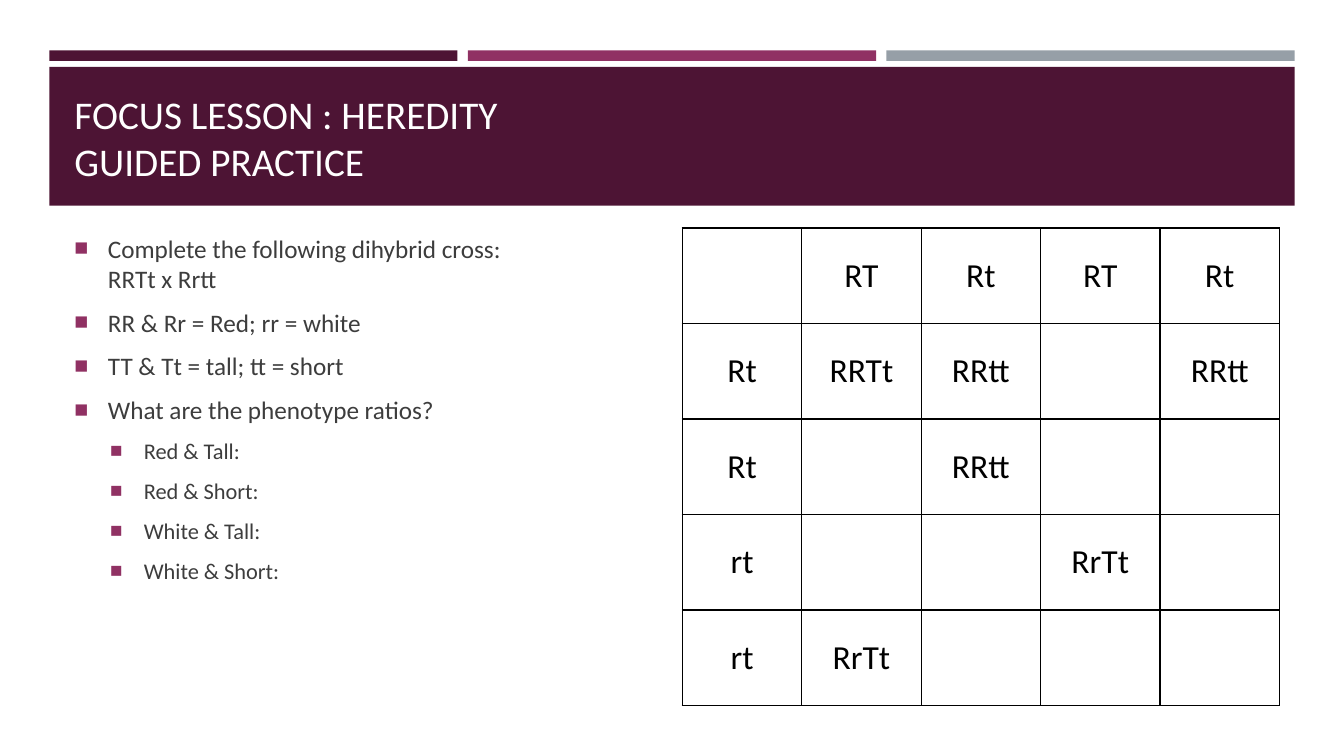
from typing import NamedTuple

from lxml.etree import SubElement
from pptx import Presentation
from pptx.dml.color import RGBColor
from pptx.enum.shapes import MSO_SHAPE as Shape
from pptx.enum.text import MSO_ANCHOR as Anchor, MSO_AUTO_SIZE as AutoSize, PP_ALIGN as Align
from pptx.oxml.ns import qn
from pptx.util import Pt

FONT = "Calibri"
PLUM = "4D1434"
MAGENTA = "903163"
GREY = "969FA7"
WHITE = "FFFFFF"
BLACK = "000000"
TEXT = "3D3D3D"


class Area(NamedTuple):
    left: float
    top: float
    width: float
    height: float


class Block(NamedTuple):
    area: Area
    fill: str


class Bullet(NamedTuple):
    text: str
    level: int = 0


BAR_WIDTH, BAR_STEP = 291.6, 299
BLOCKS = [
    Block(Area(35.2 + BAR_STEP * index, 36, BAR_WIDTH, 7.5), fill)
    for index, fill in enumerate([PLUM, MAGENTA, GREY])
] + [Block(Area(35.2, 47.8, 889.6, 99.2), PLUM)]

TITLE_AREA = Area(46, 57.6, 868.3, 77.8)
BODY_AREA = Area(46, 162.8, 427, 341.2)
TABLE_AREA = Area(487.4, 162.8, 426.5, 341.2)

BULLETS = [
    Bullet("Complete the following dihybrid cross:\vRRTt x Rrtt"),
    Bullet("RR & Rr = Red; rr = white"),
    Bullet("TT & Tt = tall; tt = short"),
    Bullet("What are the phenotype ratios?"),
    Bullet("Red & Tall:", 1),
    Bullet("Red & Short:", 1),
    Bullet("White & Tall:", 1),
    Bullet("White & Short:", 1),
]
BULLET_SIZES = [18, 16]
BULLET_MARGINS = [24, 49.7]
BULLET_HANG = 24

CROSS = [
    ["", "RT", "Rt", "RT", "Rt"],
    ["Rt", "RRTt", "RRtt", "", "RRtt"],
    ["Rt", "", "RRtt", "", ""],
    ["rt", "", "", "RrTt", ""],
    ["rt", "RrTt", "", "", ""],
]


def color(value: str) -> RGBColor:
    return RGBColor.from_string(value)


def points(area: Area) -> list[int]:
    return [Pt(length) for length in area]


def set_font(para, size: float, fill: str) -> None:
    para.font.name = FONT
    para.font.size = Pt(size)
    para.font.color.rgb = color(fill)


def draw_block(page, block: Block) -> None:
    shape = page.shapes.add_shape(Shape.RECTANGLE, *points(block.area))
    shape.shadow.inherit = False
    shape.fill.solid()
    shape.fill.fore_color.rgb = color(block.fill)
    shape.line.fill.background()


def draw_title(page, text: str) -> None:
    title = page.shapes.title
    title.left, title.top, title.width, title.height = points(TITLE_AREA)
    frame = title.text_frame
    frame.text = text
    frame.word_wrap = True
    frame.auto_size = AutoSize.NONE
    frame.vertical_anchor = Anchor.BOTTOM
    para = frame.paragraphs[0]
    para.alignment = Align.LEFT
    set_font(para, 28, WHITE)


def format_bullet(para, bullet: Bullet) -> None:
    size = BULLET_SIZES[bullet.level]
    para.text = bullet.text
    para.level = bullet.level
    para.space_before = Pt(size * 0.2)
    para.space_after = Pt(6)
    properties = para._p.get_or_add_pPr()
    properties.set("marL", str(Pt(BULLET_MARGINS[bullet.level])))
    properties.set("indent", str(-Pt(BULLET_HANG)))
    tint = SubElement(properties, qn("a:buClr"))
    SubElement(tint, qn("a:srgbClr"), val=MAGENTA)
    SubElement(properties, qn("a:buSzPct"), val="92000")
    SubElement(properties, qn("a:buFont"), typeface="Arial")
    SubElement(properties, qn("a:buChar"), char="■")
    set_font(para, size, TEXT)


def draw_bullets(page, bullets: list[Bullet]) -> None:
    frame = page.shapes.add_textbox(*points(BODY_AREA)).text_frame
    frame.word_wrap = True
    for index, bullet in enumerate(bullets):
        para = frame.add_paragraph() if index else frame.paragraphs[0]
        format_bullet(para, bullet)


def format_cell(cell, text: str) -> None:
    properties = cell._tc.get_or_add_tcPr()
    for side in ["a:lnL", "a:lnR", "a:lnT", "a:lnB"]:
        border = SubElement(properties, qn(side), w=str(Pt(1)))
        paint = SubElement(border, qn("a:solidFill"))
        SubElement(paint, qn("a:srgbClr"), val=BLACK)
    cell.fill.background()
    cell.vertical_anchor = Anchor.MIDDLE
    cell.text = text
    para = cell.text_frame.paragraphs[0]
    para.alignment = Align.CENTER
    set_font(para, 24, BLACK)


def draw_table(page, rows: list[list[str]]) -> None:
    count = len(rows)
    table = page.shapes.add_table(count, count, *points(TABLE_AREA)).table
    table.first_row = False
    table.horz_banding = False
    for row, texts in zip(table.rows, rows):
        for cell, text in zip(row.cells, texts):
            format_cell(cell, text)


def main() -> None:
    deck = Presentation()
    deck.slide_width, deck.slide_height = Pt(960), Pt(540)
    page = deck.slides.add_slide(deck.slide_layouts[5])
    for block in BLOCKS:
        draw_block(page, block)
    title = page.shapes.title._element
    title.getparent().append(title)
    draw_title(page, "FOCUS LESSON : HEREDITY\vGUIDED PRACTICE")
    draw_table(page, CROSS)
    draw_bullets(page, BULLETS)
    deck.save("out.pptx")


if __name__ == "__main__":
    main()
